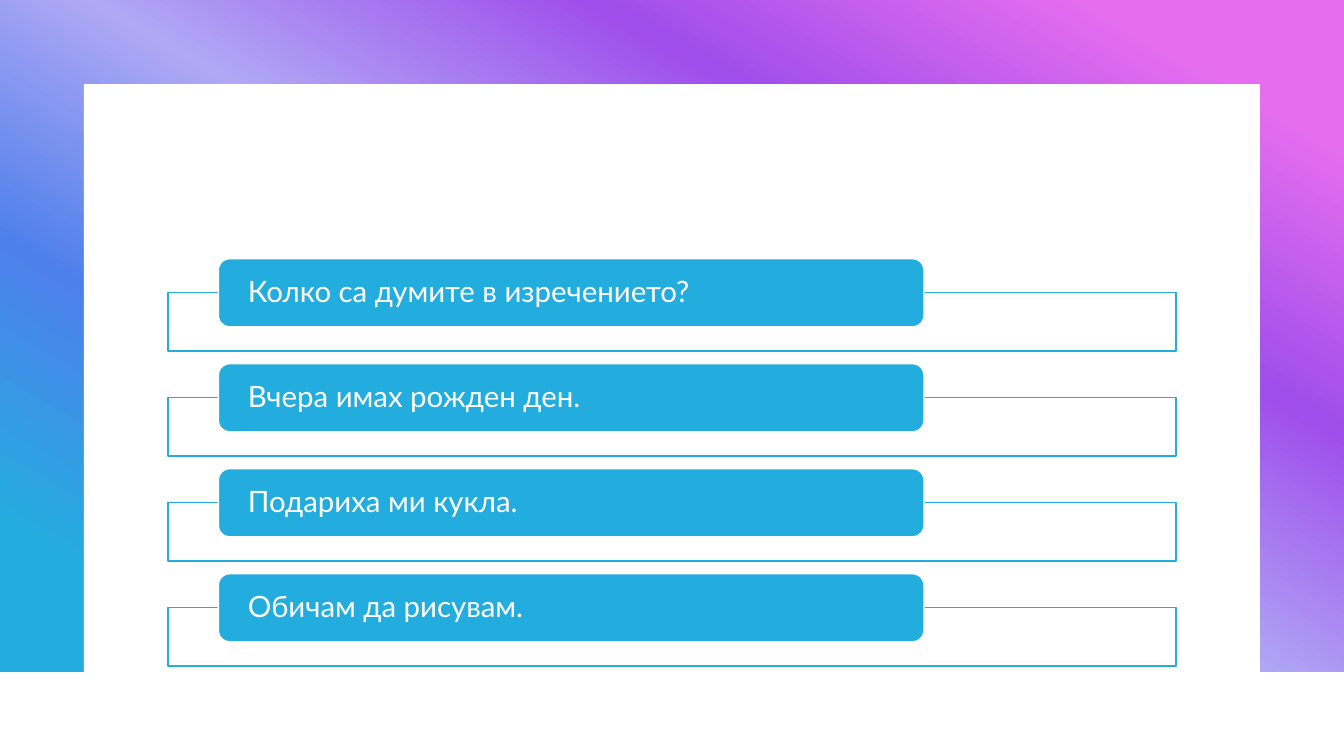
from copy import deepcopy
from dataclasses import dataclass

from lxml import etree
from pptx import Presentation
from pptx.dml.color import RGBColor
from pptx.enum.shapes import MSO_SHAPE
from pptx.enum.text import MSO_ANCHOR, PP_ALIGN
from pptx.oxml.ns import qn
from pptx.util import Inches, Pt

RECTANGLE = MSO_SHAPE.RECTANGLE
ROUNDED = MSO_SHAPE.ROUNDED_RECTANGLE
MIDDLE = MSO_ANCHOR.MIDDLE
LEFT = PP_ALIGN.LEFT

COLUMNS, ROWS = 16, 9
BLANK_LAYOUT = 6

SENTENCES = (
    "Колко са думите в изречението?",
    "Вчера имах рожден ден.",
    "Подариха ми кукла.",
    "Обичам да рисувам.",
)
FIRST_BAR_ROW = 3.08
BAR_PITCH = 1.25
FRAME_OFFSET = 0.4


@dataclass(frozen=True)
class Theme:
    font: str = "Lato"
    text_size: int = 21
    line_width: int = 1
    white: str = "FFFFFF"
    accent: str = "23ADDF"
    gradient: tuple = (
        (0.1, "E66EEE"),
        (0.3, "9F4EEB"),
        (0.5, "B0A8F5"),
        (0.7, "4E80EB"),
        (0.9, "23ADDF"),
    )
    gradient_angle: int = 240  # counter-clockwise


class SlideBuilder:
    """Places elements on a grid of COLUMNS by ROWS cells."""

    def __init__(self, presentation, theme):
        self.theme = theme
        self.column = presentation.slide_width / COLUMNS
        self.row = presentation.slide_height / ROWS
        layout = presentation.slide_layouts[BLANK_LAYOUT]
        self.slide = presentation.slides.add_slide(layout)

    def box(self, column, row, columns, rows, kind=RECTANGLE, fill=None, line=None, opacity=100):
        shape = self.slide.shapes.add_shape(
            kind,
            round(column * self.column),
            round(row * self.row),
            round(columns * self.column),
            round(rows * self.row),
        )
        shape.shadow.inherit = False
        if fill:
            shape.fill.solid()
            shape.fill.fore_color.rgb = RGBColor.from_string(fill)
        if opacity < 100:
            color = shape._element.spPr.find(qn("a:solidFill"))[0]
            etree.SubElement(color, qn("a:alpha"), val=str(opacity * 1000))
        if line:
            shape.line.color.rgb = RGBColor.from_string(line)
            shape.line.width = Pt(self.theme.line_width)
        else:
            shape.line.fill.background()
        return shape

    def gradient_box(self, column, row, columns, rows):
        shape = self.box(column, row, columns, rows)
        shape.fill.gradient()
        shape.fill.gradient_angle = self.theme.gradient_angle
        stop_list = shape._element.spPr.find(qn("a:gradFill")).find(qn("a:gsLst"))
        while len(stop_list) < len(self.theme.gradient):
            stop_list.append(deepcopy(stop_list[0]))
        for stop, (position, color) in zip(shape.fill.gradient_stops, self.theme.gradient):
            stop.position = position
            stop.color.rgb = RGBColor.from_string(color)

    def add_text(self, shape, text, *, size, color, margin, align=LEFT, line_spacing=0.9):
        frame = shape.text_frame
        frame.word_wrap = True
        frame.vertical_anchor = MIDDLE
        frame.margin_left = frame.margin_right = Inches(margin)
        frame.margin_top = frame.margin_bottom = 0
        paragraph = frame.paragraphs[0]
        paragraph.alignment = align
        paragraph.line_spacing = line_spacing
        run = paragraph.add_run()
        run.text = text
        run.font.name = self.theme.font
        run.font.size = Pt(size)
        run.font.color.rgb = RGBColor.from_string(color)

    def sentence(self, text, row):
        """Draw an outlined frame with a labelled bar over its top edge."""
        theme = self.theme
        self.box(2, row + FRAME_OFFSET, 12, 0.7, fill=theme.white, line=theme.accent, opacity=90)
        bar = self.box(2.6, row, 8.4, 0.81, kind=ROUNDED, fill=theme.accent, line=theme.white)
        self.add_text(bar, text, size=theme.text_size, color=theme.white, margin=0.26)


def main():
    presentation = Presentation()
    presentation.slide_width = Inches(13.33)
    presentation.slide_height = Inches(7.5)

    theme = Theme()
    builder = SlideBuilder(presentation, theme)
    builder.gradient_box(0, 0, COLUMNS, 8)
    builder.box(1, 1, 14, 7, fill=theme.white)
    for index, text in enumerate(SENTENCES):
        builder.sentence(text, FIRST_BAR_ROW + index * BAR_PITCH)

    presentation.save("out.pptx")


if __name__ == "__main__":
    main()
